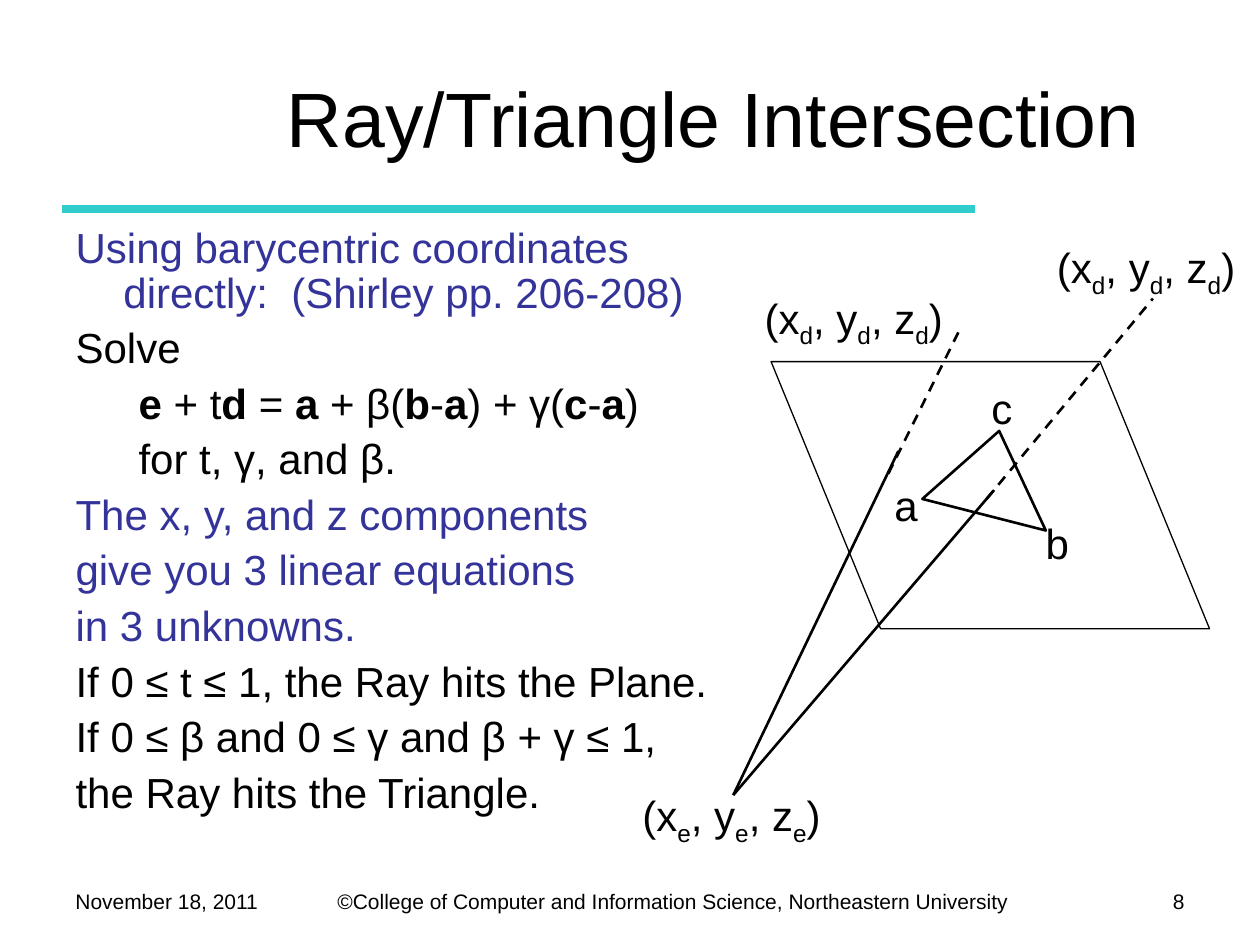
from dataclasses import dataclass

from lxml import etree
from pptx import Presentation
from pptx.dml.color import RGBColor
from pptx.enum.dml import MSO_LINE
from pptx.enum.shapes import MSO_CONNECTOR, MSO_SHAPE
from pptx.enum.text import MSO_ANCHOR, MSO_AUTO_SIZE, PP_ALIGN
from pptx.oxml.ns import qn
from pptx.util import Inches, Pt

STRAIGHT = MSO_CONNECTOR.STRAIGHT
PARALLELOGRAM = MSO_SHAPE.PARALLELOGRAM
DASH = MSO_LINE.DASH
LEFT, CENTER, RIGHT = PP_ALIGN.LEFT, PP_ALIGN.CENTER, PP_ALIGN.RIGHT


@dataclass(frozen=True)
class Theme:
    font: str = "Arial"
    ink: RGBColor = RGBColor(0x00, 0x00, 0x00)
    accent: RGBColor = RGBColor(0x33, 0x33, 0x99)
    rule: RGBColor = RGBColor(0x33, 0xCC, 0xCC)
    title: int = 44
    body: int = 24
    footer: int = 12


THEME = Theme()


@dataclass(frozen=True)
class Span:
    text: str
    bold: bool = False
    subscript: bool = False


@dataclass(frozen=True)
class Item:
    spans: list[Span]
    color: RGBColor = THEME.ink
    level: int = 0


@dataclass(frozen=True)
class Label:
    spans: list[Span]
    left: float
    top: float
    width: float
    height: float = 0.5
    size: int = THEME.body
    align: PP_ALIGN = LEFT


@dataclass(frozen=True)
class Segment:
    start: tuple[float, float]
    end: tuple[float, float]
    dashed: bool = False
    color: RGBColor = THEME.ink
    weight: float = 1.5


def plain(text: str) -> list[Span]:
    return [Span(text)]


def point_name(index: str) -> list[Span]:
    """Coordinates (x, y, z) that share one subscript."""
    spans = []
    for lead in ("(x", ", y", ", z"):
        spans += [Span(lead), Span(index, subscript=True)]
    return spans + [Span(")")]


def write_spans(para, spans: list[Span], size: int, color: RGBColor) -> None:
    for span in spans:
        run = para.add_run()
        run.text = span.text
        font = run.font
        font.name, font.size, font.bold = THEME.font, Pt(size), span.bold
        font.color.rgb = color
        if span.subscript:
            font._element.set("baseline", "-25000")


def place(shape, left: float, top: float, width: float, height: float) -> None:
    shape.left, shape.top = Inches(left), Inches(top)
    shape.width, shape.height = Inches(width), Inches(height)


def add_label(page, label: Label) -> None:
    box = page.shapes.add_textbox(Inches(label.left), Inches(label.top),
                                  Inches(label.width), Inches(label.height))
    box.text_frame.word_wrap = True
    para = box.text_frame.paragraphs[0]
    para.alignment = label.align
    write_spans(para, label.spans, label.size, THEME.ink)


def add_segment(page, segment: Segment) -> None:
    ends = [Inches(value) for value in segment.start + segment.end]
    line = page.shapes.add_connector(STRAIGHT, *ends)
    line.line.color.rgb = segment.color
    line.line.width = Pt(segment.weight)
    if segment.dashed:
        line.line.dash_style = DASH
    etree.SubElement(line._element.spPr, qn("a:effectLst"))


def outline(shape, weight: float) -> None:
    shape.shadow.inherit = False
    shape.fill.background()
    shape.line.color.rgb = THEME.ink
    shape.line.width = Pt(weight)


def add_triangle(page, corners: list[tuple[float, float]]) -> None:
    points = [(Inches(x), Inches(y)) for x, y in corners]
    builder = page.shapes.build_freeform(*points[0])
    builder.add_line_segments(points[1:], close=True)
    outline(builder.convert_to_shape(), 1.5)


def add_plane(page) -> None:
    plane = page.shapes.add_shape(PARALLELOGRAM, Inches(6.12), Inches(2.87),
                                  Inches(3.48), Inches(2.12))
    plane.adjustments[0] = 0.41
    plane._element.spPr.find(qn("a:xfrm")).set("flipH", "1")
    outline(plane, 0.75)


def fill_title(title, text: str) -> None:
    place(title, 1.83, 0.3, 7.67, 1.25)
    frame = title.text_frame
    frame.auto_size = MSO_AUTO_SIZE.NONE
    frame.vertical_anchor = MSO_ANCHOR.MIDDLE
    frame.paragraphs[0].alignment = CENTER
    write_spans(frame.paragraphs[0], plain(text), THEME.title, THEME.ink)


def fill_body(body, items: list[Item]) -> None:
    place(body, 0.5, 1.75, 5.55, 4.95)
    frame = body.text_frame
    frame.auto_size = MSO_AUTO_SIZE.NONE
    indents = [(0.38, -0.38), (0.81, -0.31)]
    for number, item in enumerate(items):
        para = frame.add_paragraph() if number else frame.paragraphs[0]
        para.level = item.level
        para.line_spacing = 0.9
        para.space_before = Pt(5.8 if number else 0)
        margin, first = indents[item.level]
        properties = para._p.get_or_add_pPr()
        properties.set("marL", str(Inches(margin)))
        properties.set("indent", str(Inches(first)))
        etree.SubElement(properties, qn("a:buNone"))
        write_spans(para, item.spans, THEME.body, item.color)


EQUATION = [
    Span("e ", True), Span("+ t"), Span("d", True), Span(" = "), Span("a ", True),
    Span("+ β("), Span("b", True), Span("-"), Span("a", True), Span(") + γ("),
    Span("c", True), Span("-"), Span("a", True), Span(")"),
]
ITEMS = [
    Item(plain("Using barycentric coordinates directly:  (Shirley pp. 206-208)"), THEME.accent),
    Item(plain("Solve")),
    Item(EQUATION, level=1),
    Item(plain("for t, γ, and β."), level=1),
    Item(plain("The x, y, and z components"), THEME.accent),
    Item(plain("give you 3 linear equations"), THEME.accent),
    Item(plain("in 3 unknowns."), THEME.accent),
    Item(plain("If 0 ≤ t ≤ 1, the Ray hits the Plane.")),
    Item(plain("If 0 ≤ β and 0 ≤ γ and β + γ ≤ 1,")),
    Item(plain("the Ray hits the Triangle.")),
]
EYE = (5.82, 6.31)
TITLE_RULE = Segment((0.49, 1.66), (7.74, 1.66), color=THEME.rule, weight=4.5)
RAYS = [
    Segment(EYE, (7.89, 3.89)), Segment((7.83, 3.96), (9.15, 2.37), dashed=True),
    Segment(EYE, (7.13, 3.58)), Segment((7.05, 3.76), (7.61, 2.63), dashed=True),
]
TRIANGLE = [(7.93, 3.42), (7.32, 3.96), (8.3, 4.21)]
LABELS = [
    Label(point_name("e"), 5, 6.22, 1.87),
    Label(point_name("d"), 8.29, 1.87, 1.71),
    Label(point_name("d"), 5.97, 2.27, 1.71),
    Label(plain("a"), 7, 3.76, 0.42),
    Label(plain("b"), 8.2, 4.06, 0.42),
    Label(plain("c"), 7.77, 2.99, 0.42),
]
FOOTERS = [
    Label(plain("©College of Computer and Information Science, Northeastern University"),
          2.58, 7, 5.66, 0.3, THEME.footer),
    Label(plain("November 18, 2011"), 0.5, 7, 1.75, 0.33, THEME.footer),
    Label(plain("8"), 8.67, 7, 0.83, 0.35, THEME.footer, RIGHT),
]


def main() -> None:
    deck = Presentation()
    deck.slide_width, deck.slide_height = Inches(10), Inches(7.5)
    page = deck.slides.add_slide(deck.slide_layouts[1])
    # Title and text
    fill_title(page.shapes.title, "Ray/Triangle Intersection")
    fill_body(page.placeholders[1], ITEMS)
    # Diagram, with the rule below the title
    add_triangle(page, TRIANGLE)
    add_plane(page)
    for segment in [TITLE_RULE] + RAYS:
        add_segment(page, segment)
    # Point names and footer
    for label in LABELS + FOOTERS:
        add_label(page, label)
    deck.save("out.pptx")


if __name__ == "__main__":
    main()
